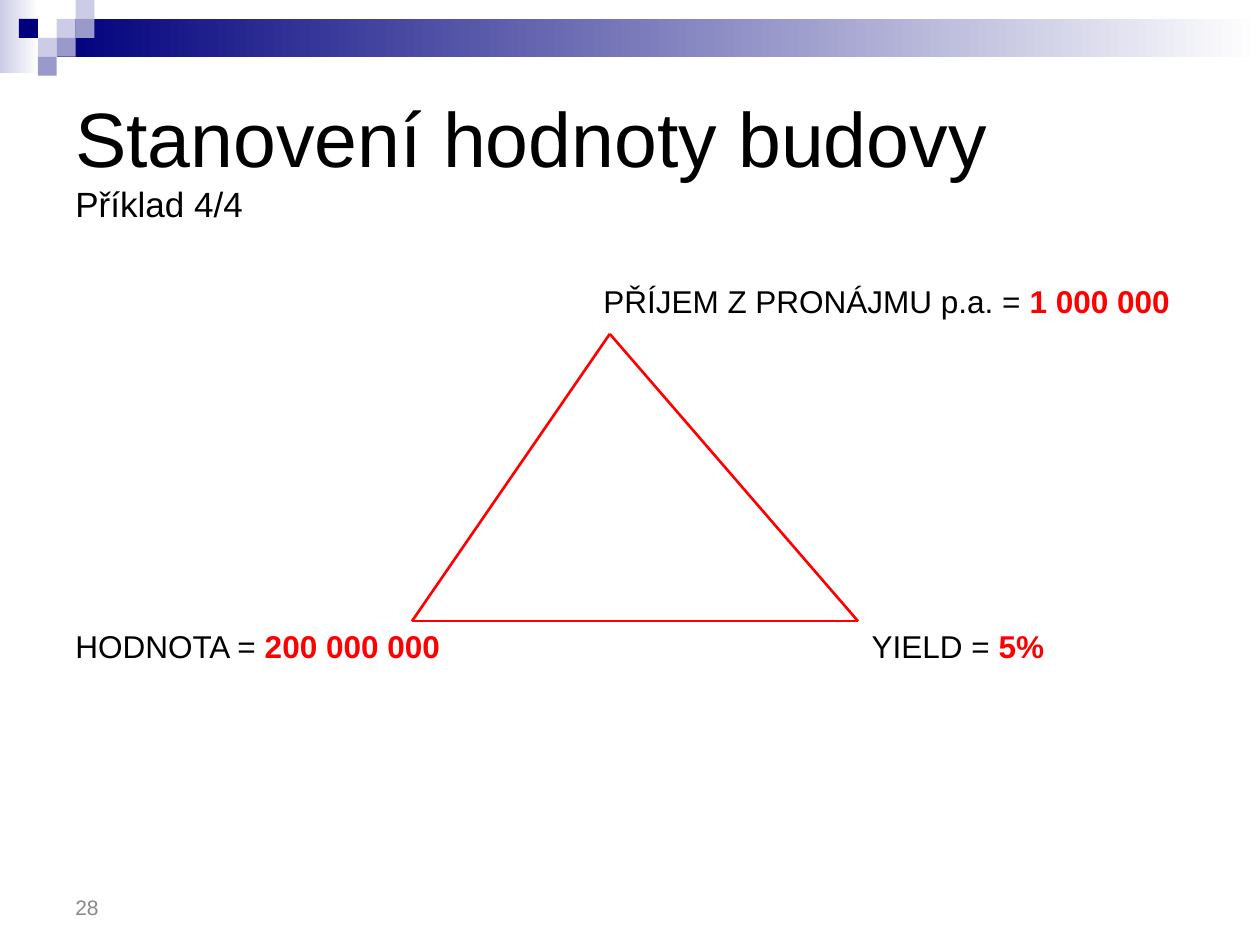
from pptx import Presentation
from pptx.dml.color import RGBColor
from pptx.enum.shapes import MSO_CONNECTOR, MSO_SHAPE
from pptx.enum.text import MSO_ANCHOR
from pptx.oxml.ns import qn
from pptx.util import Inches, Pt
from lxml.etree import SubElement

BLACK = RGBColor(0x00, 0x00, 0x00)
WHITE = RGBColor(0xFF, 0xFF, 0xFF)
RED = RGBColor(0xFF, 0x00, 0x00)
GRAY = RGBColor(0x89, 0x89, 0x89)
NAVY = RGBColor(0x00, 0x00, 0x7D)
LAVENDER = RGBColor(0xCC, 0xCC, 0xE6)
PERIWINKLE = RGBColor(0x99, 0x99, 0xCC)

TILE = 0.15
# column and row on the tile grid, colour
TILES = [
    (3, 1, LAVENDER), (4, 0, LAVENDER), (4, 1, PERIWINKLE), (2, 2, LAVENDER),
    (1, 1, NAVY), (3, 2, PERIWINKLE), (2, 3, PERIWINKLE),
]

APEX = (4.84, 2.65)
LEFT_CORNER = (3.27, 4.93)
RIGHT_CORNER = (6.81, 4.93)
SIDES = [(LEFT_CORNER, RIGHT_CORNER), (LEFT_CORNER, APEX), (RIGHT_CORNER, APEX)]

# left, top, width, caption, value
CORNER_LABELS = [
    (4.69, 2.19, 4.81, "PŘÍJEM Z PRONÁJMU p.a. = ", "1 000 000"),
    (6.82, 4.93, 1.58, "YIELD = ", "5%"),
    (0.5, 4.93, 3.19, "HODNOTA = ", "200 000 000"),
]


class SlideBuilder:
    font_name = "Arial"
    line_width = Pt(1.5)

    def __init__(self, slide):
        self.slide = slide

    def rectangle(self, left, top, width, height, color, fade_to=None):
        """Draw a borderless rectangle, fading to the right if fade_to is given."""
        shape = self.slide.shapes.add_shape(
            MSO_SHAPE.RECTANGLE, Inches(left), Inches(top), Inches(width), Inches(height))
        shape.shadow.inherit = False
        shape.line.fill.background()
        if fade_to is None:
            shape.fill.solid()
            shape.fill.fore_color.rgb = color
            return
        shape.fill.gradient()
        shape.fill.gradient_angle = 0
        stops = zip(shape.fill.gradient_stops, (color, fade_to), (0, 1))
        for stop, stop_color, position in stops:
            stop.color.rgb = stop_color
            stop.position = position

    def line(self, start, end, color):
        connector = self.slide.shapes.add_connector(
            MSO_CONNECTOR.STRAIGHT, *(Inches(value) for value in start + end))
        connector.line.color.rgb = color
        connector.line.width = self.line_width
        SubElement(connector._element.spPr, qn("a:effectLst"))

    def text_box(self, left, top, width, height, anchor=MSO_ANCHOR.TOP, wrap=True):
        """Add an empty text box and return its first paragraph."""
        box = self.slide.shapes.add_textbox(
            Inches(left), Inches(top), Inches(width), Inches(height))
        box.text_frame.word_wrap = wrap
        box.text_frame.vertical_anchor = anchor
        return box.text_frame.paragraphs[0]

    def run(self, paragraph, text, size, color=BLACK, bold=False):
        run = paragraph.add_run()
        run.text = text
        run.font.name = self.font_name
        run.font.size = Pt(size)
        run.font.bold = bold
        run.font.color.rgb = color


def main():
    presentation = Presentation()
    presentation.slide_width = Inches(10)
    presentation.slide_height = Inches(7.5)
    builder = SlideBuilder(presentation.slides.add_slide(presentation.slide_layouts[6]))

    builder.rectangle(0, 0, 0.31, 0.58, LAVENDER, fade_to=WHITE)
    builder.rectangle(0.45, 0.15, 9.55, 0.3, NAVY, fade_to=WHITE)
    for column, row, color in TILES:
        builder.rectangle(column * TILE, row * TILE, TILE, TILE, color)

    title = builder.text_box(0.5, 0.5, 9, 1.5, MSO_ANCHOR.MIDDLE)
    builder.run(title, "Stanovení hodnoty budovy", 44)
    title.add_line_break()
    builder.run(title, "Příklad 4/4", 20)

    page_number = builder.text_box(0.5, 6.83, 2.33, 0.52, MSO_ANCHOR.BOTTOM)
    builder.run(page_number, "28", 12, GRAY)

    for start, end in SIDES:
        builder.line(start, end, RED)

    for left, top, width, caption, value in CORNER_LABELS:
        label = builder.text_box(left, top, width, 0.4, wrap=False)
        builder.run(label, caption, 18)
        builder.run(label, value, 18, RED, bold=True)

    presentation.save("out.pptx")


if __name__ == "__main__":
    main()
